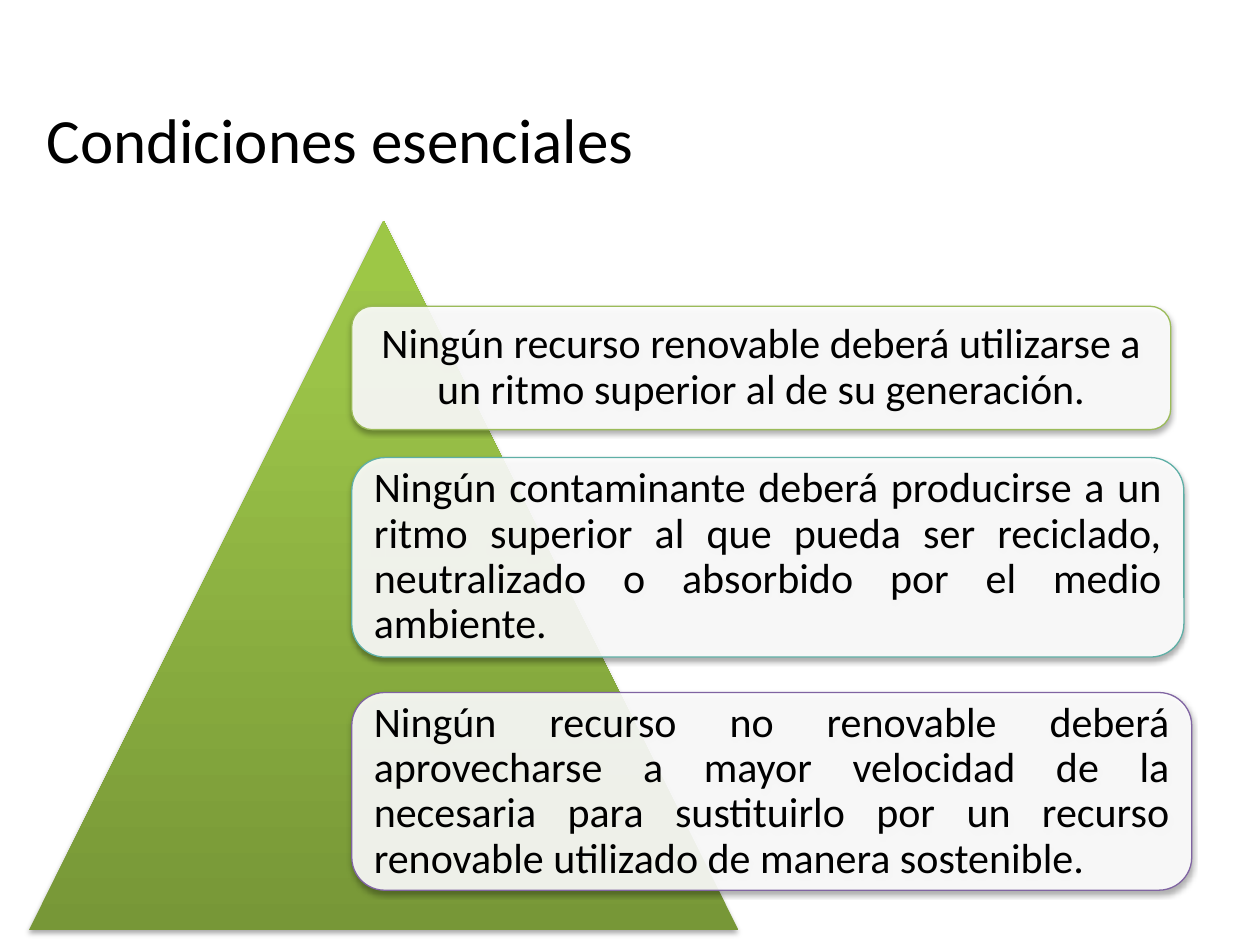
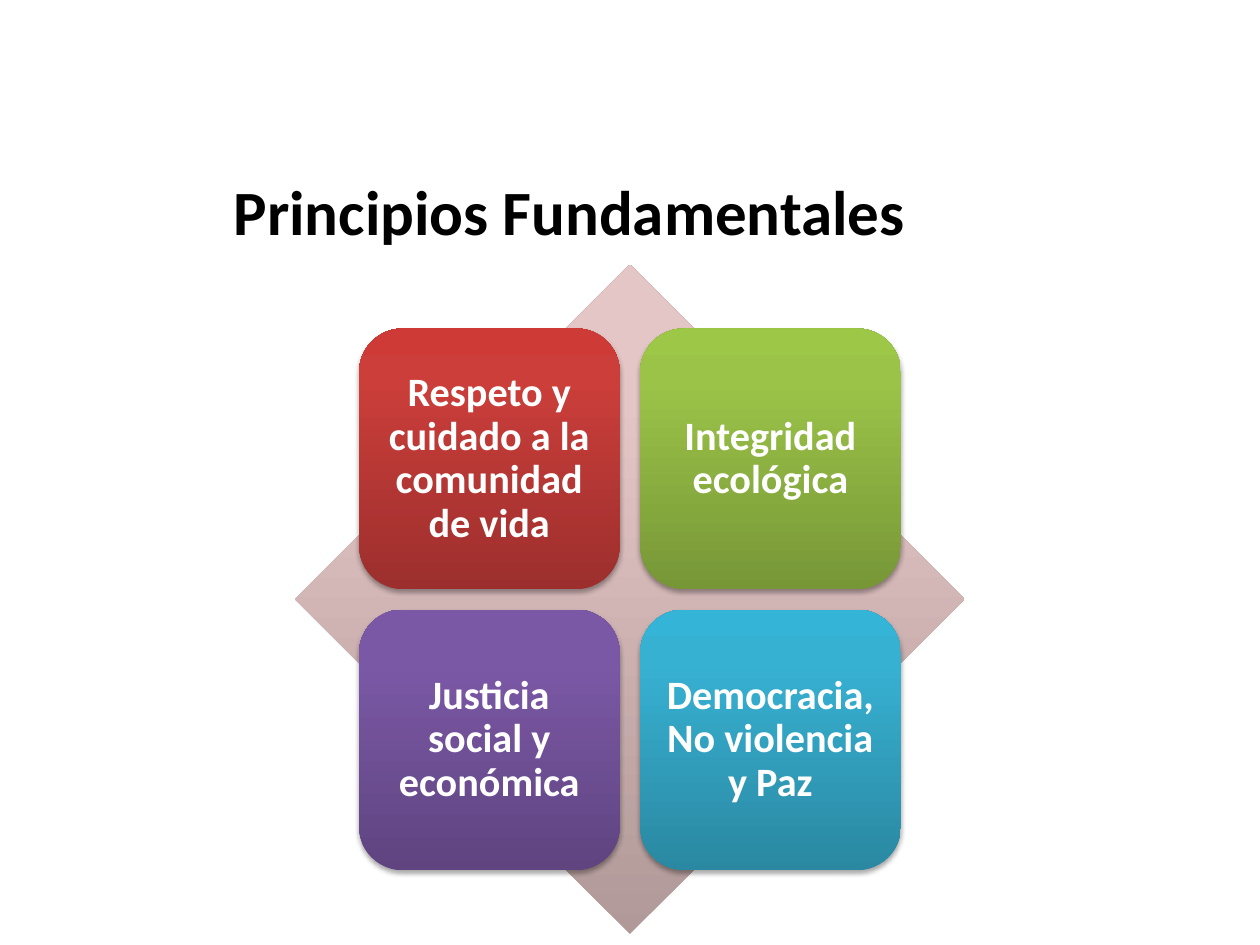
from copy import deepcopy

from lxml import etree
from pptx import Presentation
from pptx.dml.color import RGBColor
from pptx.enum.shapes import MSO_SHAPE
from pptx.enum.text import MSO_ANCHOR, PP_ALIGN
from pptx.oxml.ns import qn
from pptx.util import Pt

TRIANGLE, DIAMOND = MSO_SHAPE.ISOSCELES_TRIANGLE, MSO_SHAPE.DIAMOND
ROUNDED = MSO_SHAPE.ROUNDED_RECTANGLE
LEFT, CENTER, JUSTIFY = PP_ALIGN.LEFT, PP_ALIGN.CENTER, PP_ALIGN.JUSTIFY
MIDDLE = MSO_ANCHOR.MIDDLE

FONT = "Calibri"
BLACK = RGBColor(0x00, 0x00, 0x00)
WHITE = RGBColor(0xFF, 0xFF, 0xFF)
GREEN_EDGE = RGBColor(0x9B, 0xBB, 0x59)
TEAL_EDGE = RGBColor(0x5E, 0xAF, 0xA6)
PURPLE_EDGE = RGBColor(0x80, 0x64, 0xA2)

# Gradients run from the bottom edge to the top edge
STOPS = (0, 0.8, 1)
GREEN = (RGBColor(0x77, 0x97, 0x37), RGBColor(0x9B, 0xC3, 0x48), RGBColor(0x9D, 0xC7, 0x46))
RED = (RGBColor(0x9C, 0x2F, 0x2D), RGBColor(0xCB, 0x3E, 0x3A), RGBColor(0xCE, 0x3B, 0x37))
PURPLE = (RGBColor(0x5F, 0x44, 0x80), RGBColor(0x7B, 0x58, 0xA6), RGBColor(0x7C, 0x57, 0xA8))
BLUE = (RGBColor(0x2A, 0x88, 0xA2), RGBColor(0x37, 0xB1, 0xD2), RGBColor(0x34, 0xB4, 0xD6))
ROSE = (RGBColor(0xB0, 0x99, 0x98), RGBColor(0xE5, 0xC6, 0xC6), RGBColor(0xE6, 0xC7, 0xC6))


class Deck:
    """Holds the shared style and the slide being built."""

    def __init__(self):
        self.prs = Presentation()
        self.prs.slide_width, self.prs.slide_height = Pt(720), Pt(540)
        self.slide = None

    def new_slide(self):
        self.slide = self.prs.slides.add_slide(self.prs.slide_layouts[6])

    def add_text(self, frame, text, size, color, align, bold=False):
        frame.word_wrap = True
        frame.vertical_anchor = MIDDLE
        paragraph = frame.paragraphs[0]
        paragraph.alignment = align
        run = paragraph.add_run()
        run.text = text
        run.font.name, run.font.size, run.font.bold = FONT, Pt(size), bold
        run.font.color.rgb = color
        return paragraph

    def title(self, text, left, top, width, align=LEFT, bold=False):
        box = self.slide.shapes.add_textbox(Pt(left), Pt(top), Pt(width), Pt(40))
        self.add_text(box.text_frame, text, 36, BLACK, align, bold)

    def shape(self, preset, left, top, width, height, shadow=True):
        shape = self.slide.shapes.add_shape(preset, Pt(left), Pt(top), Pt(width), Pt(height))
        shape.shadow.inherit = False
        if shadow:
            effects = shape._element.spPr.find(qn("a:effectLst"))
            outer = etree.SubElement(effects, qn("a:outerShdw"), blurRad=str(Pt(3.1)),
                                     dist=str(Pt(1.8)), dir="5400000", rotWithShape="0")
            tone = etree.SubElement(outer, qn("a:srgbClr"), val=str(BLACK))
            etree.SubElement(tone, qn("a:alpha"), val="35000")
        return shape

    def gradient_shape(self, preset, left, top, width, height, colors, shadow=True):
        shape = self.shape(preset, left, top, width, height, shadow)
        shape.line.fill.background()
        shape.fill.gradient()
        shape.fill.gradient_angle = 90
        stop_list = shape._element.spPr.find(".//" + qn("a:gsLst"))
        stop_list.append(deepcopy(stop_list[0]))
        for stop, position, color in zip(shape.fill.gradient_stops, STOPS, colors):
            stop.position = position
            stop.color.rgb = color
        return shape

    def label(self, shape, text, size, color, align, bold=False):
        frame = shape.text_frame
        frame.margin_left = frame.margin_right = Pt(7.2)
        frame.margin_top = frame.margin_bottom = Pt(7.2)
        self.add_text(frame, text, size, color, align, bold).line_spacing = 0.9

    def card(self, text, left, top, width, height, edge, align):
        card = self.shape(ROUNDED, left, top, width, height)
        card.fill.solid()
        card.fill.fore_color.rgb = WHITE
        tone = card._element.spPr.find(qn("a:solidFill"))[0]
        etree.SubElement(tone, qn("a:alpha"), val="90000")
        card.line.color.rgb = edge
        card.line.width = Pt(0.75)
        self.label(card, text, 24, BLACK, align)

    def tile(self, text, left, top, side, colors):
        tile = self.gradient_shape(ROUNDED, left, top, side, side, colors)
        self.label(tile, text, 23, WHITE, CENTER, bold=True)


def conditions_slide(deck):
    deck.new_slide()
    deck.title("Condiciones esenciales", 19.5, 59, 680)
    deck.gradient_shape(TRIANGLE, 16.5, 126, 405.5, 405.5, GREEN)

    # Conditions: top, width, height, edge, alignment, text
    conditions = (
        (175, 468, 70.5, GREEN_EDGE, CENTER,
         "Ningún recurso renovable deberá utilizarse a un ritmo superior "
         "al de su generación."),
        (261.5, 475.5, 114, TEAL_EDGE, JUSTIFY,
         "Ningún contaminante deberá producirse a un ritmo superior al que pueda "
         "ser reciclado, neutralizado o absorbido por el medio ambiente."),
        (395.75, 480, 113, PURPLE_EDGE, JUSTIFY,
         "Ningún recurso no renovable deberá aprovecharse a mayor velocidad de la "
         "necesaria para sustituirlo por un recurso renovable utilizado de manera "
         "sostenible."),
    )
    for top, width, height, edge, align, text in conditions:
        deck.card(text, 201, top, width, height, edge, align)


def principles_slide(deck):
    deck.new_slide()
    deck.title("Principios Fundamentales", 1.5, 100, 648, CENTER, bold=True)
    deck.gradient_shape(DIAMOND, 168.75, 151.25, 382.5, 382.5, ROSE, shadow=False)

    # Two by two grid of principles
    side, pitch = 149, 160.6
    principles = (
        ("Respeto y cuidado a la comunidad de vida", RED),
        ("Integridad ecológica", GREEN),
        ("Justicia social y económica", PURPLE),
        ("Democracia, No violencia y Paz", BLUE),
    )
    for index, (text, colors) in enumerate(principles):
        row, column = divmod(index, 2)
        deck.tile(text, 205.2 + column * pitch, 187.75 + row * pitch, side, colors)


def main():
    deck = Deck()
    conditions_slide(deck)
    principles_slide(deck)
    deck.prs.save("out.pptx")


if __name__ == "__main__":
    main()
